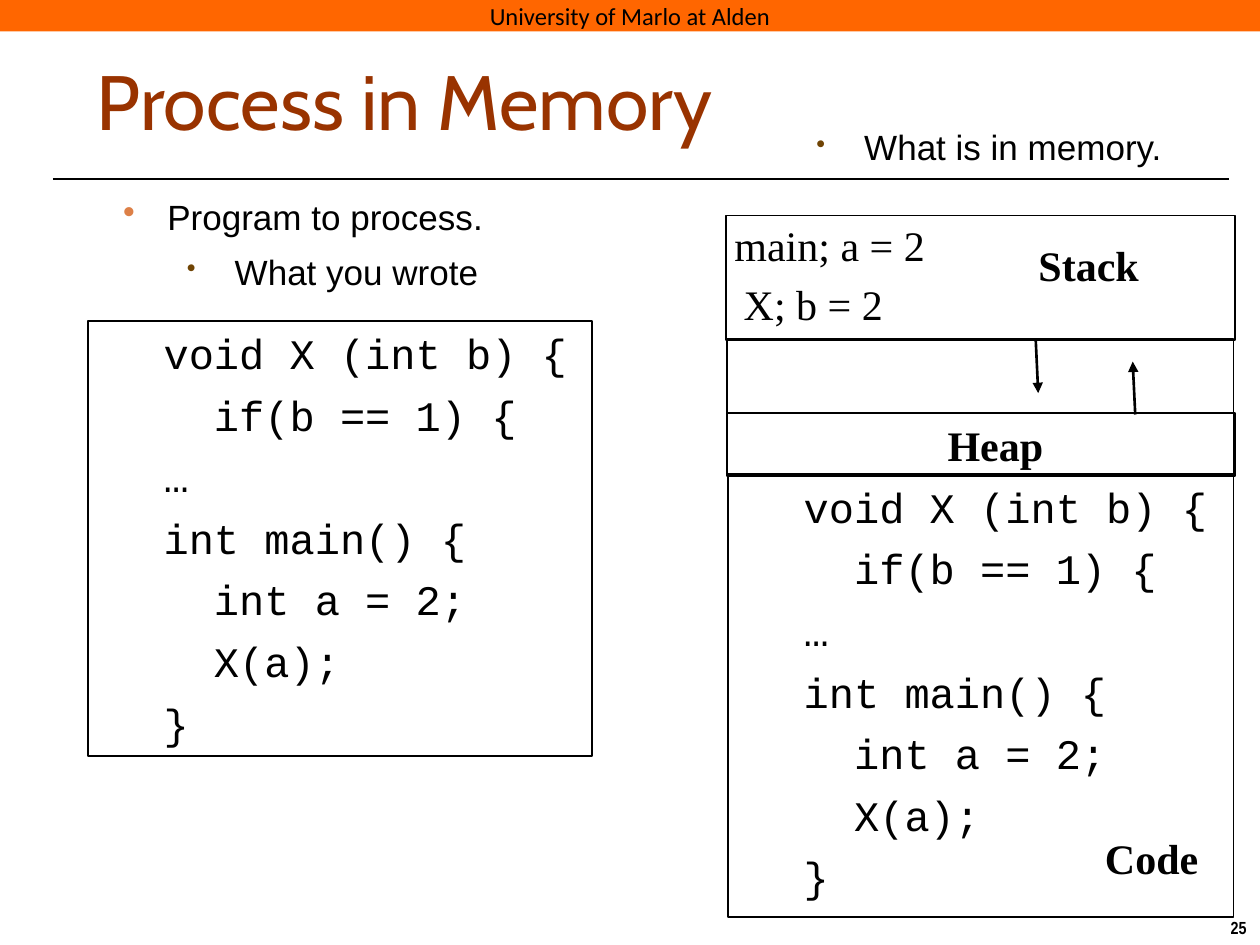
from lxml import etree
from pptx import Presentation
from pptx.dml.color import RGBColor
from pptx.enum.shapes import MSO_CONNECTOR, MSO_SHAPE
from pptx.enum.text import MSO_ANCHOR, PP_ALIGN
from pptx.oxml.ns import qn
from pptx.util import Inches, Pt

BLACK = RGBColor(0x00, 0x00, 0x00)
ORANGE = RGBColor(0xFF, 0x66, 0x00)
RUST = RGBColor(0x99, 0x33, 0x00)
BULLET_ORANGE = RGBColor(0xDD, 0x80, 0x47)
BULLET_BROWN = RGBColor(0x70, 0x44, 0x04)
RECTANGLE = MSO_SHAPE.RECTANGLE
STRAIGHT = MSO_CONNECTOR.STRAIGHT
LEFT, CENTER = PP_ALIGN.LEFT, PP_ALIGN.CENTER
TOP, MIDDLE = MSO_ANCHOR.TOP, MSO_ANCHOR.MIDDLE

CODE = [
    "void X (int b) {",
    "  if(b == 1) {",
    "…",
    "int main() {",
    "  int a = 2;",
    "  X(a);",
    "}",
]

deck = Presentation()
deck.slide_width, deck.slide_height = Inches(10), Inches(7.5)
page = deck.slides.add_slide(deck.slide_layouts[6])


def write(box, lines, font, size, color=BLACK, bold=False, align=LEFT,
          anchor=TOP, wrap=True, before=0, margin=0, hanging=0):
    frame = box.text_frame
    frame.word_wrap = wrap
    frame.vertical_anchor = anchor
    frame.text = "\n".join(lines)
    for para in frame.paragraphs:
        para.alignment = align
        para.space_before = Pt(before)
        para.font.name = font
        para.font.size = Pt(size)
        para.font.bold = bold
        para.font.color.rgb = color
        properties = para._p.get_or_add_pPr()
        properties.set("marL", str(Inches(margin)))
        properties.set("indent", str(Inches(-hanging)))
    return frame


def add_line(start, end, arrow=False):
    line = page.shapes.add_connector(STRAIGHT, *map(Inches, start + end))
    line.line.color.rgb = BLACK
    line.line.width = Pt(1.5)
    etree.SubElement(line._element.spPr, qn("a:effectLst"))
    if arrow:
        etree.SubElement(line.line._get_or_add_ln(), qn("a:tailEnd"), type="triangle")


number = page.shapes.add_textbox(*map(Inches, (9.66, 7.23, 0.34, 0.27)))
write(number, ["25"], "Arial Narrow", 10, bold=True, align=CENTER, wrap=False)

banner = page.shapes.add_shape(RECTANGLE, 0, 0, Inches(10), Inches(0.25))
banner.shadow.inherit = False
banner.fill.solid()
banner.fill.fore_color.rgb = ORANGE
banner.line.fill.background()
frame = write(banner, ["University of Marlo at Alden"], "Calibri", 14,
              align=CENTER, anchor=MIDDLE, wrap=False)
frame.margin_left = frame.margin_right = frame.margin_top = frame.margin_bottom = 0

add_line((0.42, 1.42), (9.75, 1.42))

title = page.shapes.add_textbox(*map(Inches, (0.67, 0.25, 8.92, 1.08)))
write(title, ["Process in Memory"], "Cabin", 44, RUST, anchor=MIDDLE)

for text, place, align, before, indent, color, percent in [
    ("Program to process.", (0.88, 1.5, 8.5, 0.48), LEFT, 7, 0.35, BULLET_ORANGE, 100),
    ("What you wrote", (1.07, 1.94, 3.14, 0.48), CENTER, 5, 0.38, BULLET_BROWN, 75),
    ("What is in memory.", (6.28, 0.95, 3.14, 0.48), CENTER, 5, 0.38, BULLET_BROWN, 75),
]:
    box = page.shapes.add_textbox(*map(Inches, place))
    frame = write(box, [text], "Arial", 20, align=align, before=before,
                  margin=indent, hanging=indent)
    properties = frame.paragraphs[0]._p.get_or_add_pPr()
    bullet_color = etree.Element(qn("a:buClr"))
    etree.SubElement(bullet_color, qn("a:srgbClr"), val=str(color))
    bullet_size = etree.Element(qn("a:buSzPct"), val=str(percent * 1000))
    bullet = etree.Element(qn("a:buChar"), char="•")
    defaults = properties.find(qn("a:defRPr"))
    for part in (bullet_color, bullet_size, bullet):
        defaults.addprevious(part)

for place, lines in [
    ((0.7, 2.55, 4, 3.45), CODE),
    ((5.78, 3.77, 4.01, 3.51), CODE),
    ((5.77, 2.69, 4.02, 1.07), []),
    ((5.76, 1.71, 4.04, 0.99), []),
    ((5.77, 3.28, 4.03, 0.5), []),
]:
    region = page.shapes.add_shape(RECTANGLE, *map(Inches, place))
    region.shadow.inherit = False
    region.fill.background()
    region.line.color.rgb = BLACK
    region.line.width = Pt(1)
    if lines:
        write(region, lines, "Courier New", 24, before=6.4, margin=0.81, hanging=0.31)

for text, place, bold in [
    ("Code", (8.67, 6.56, 0.94, 0.5), True),
    ("main; a = 2", (5.73, 1.69, 1.71, 0.5), False),
    ("X; b = 2", (5.8, 2.16, 1.31, 0.5), False),
    ("Heap", (7.42, 3.28, 0.96, 0.5), True),
    ("Stack", (8.14, 1.85, 1, 0.5), True),
]:
    label = page.shapes.add_textbox(*map(Inches, place))
    write(label, [text], "Times New Roman", 24, bold=bold, align=CENTER, wrap=False)

add_line((9.01, 3.29), (8.99, 2.87), arrow=True)
add_line((8.22, 2.69), (8.24, 3.12), arrow=True)

deck.save("out.pptx")
